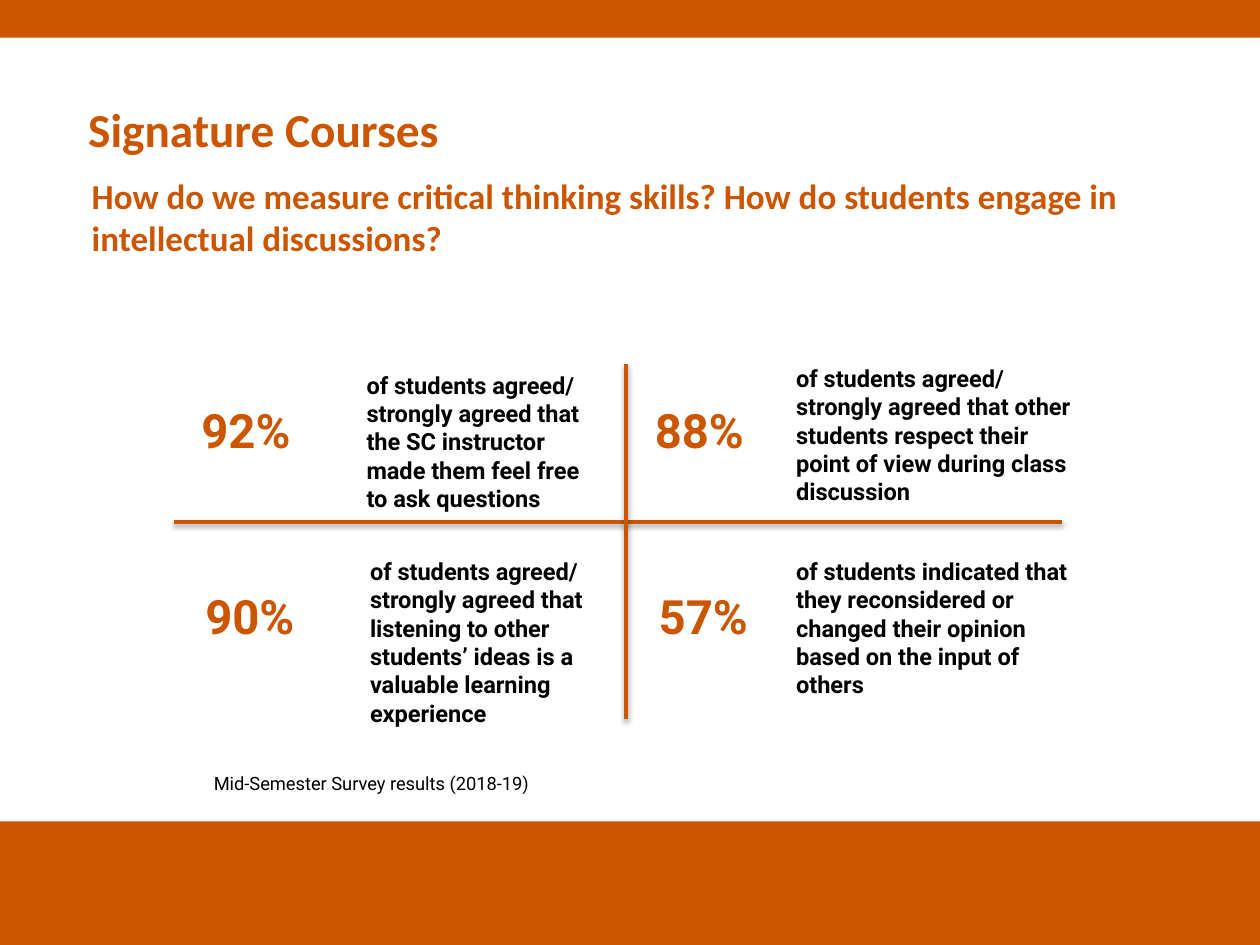
from dataclasses import dataclass

from lxml import etree
from pptx import Presentation
from pptx.dml.color import RGBColor as Rgb
from pptx.enum.shapes import MSO_CONNECTOR as Connector, MSO_SHAPE as Shape
from pptx.enum.text import MSO_ANCHOR as Anchor
from pptx.oxml.ns import qn
from pptx.util import Cm, Pt


@dataclass(frozen=True)
class Theme:
    accent: Rgb = Rgb(0xCC, 0x55, 0x00)
    ink: Rgb = Rgb(0, 0, 0)
    heading_font: str = "Calibri"
    body_font: str = "Roboto"
    large: float = 27
    medium: float = 20
    body: float = 13.5
    small: float = 10.5
    rule: float = 2


def write(frame, text, *, font, size, color, bold=True, after=None):
    for index, content in enumerate(text.split("\n")):
        paragraph = frame.add_paragraph() if index else frame.paragraphs[0]
        paragraph.text = content
        if after is not None:
            paragraph.space_after = Pt(after)
        for run in paragraph.runs:
            run.font.name = font
            run.font.size = Pt(size)
            run.font.bold = bold
            run.font.color.rgb = color


class SlideBuilder:
    def __init__(self, slide, theme):
        self.shapes = slide.shapes
        self.theme = theme

    def band(self, top, height):
        band = self.shapes.add_shape(Shape.RECTANGLE, 0, Cm(top), Cm(25.4), Cm(height))
        band.shadow.inherit = False
        band.fill.solid()
        band.fill.fore_color.rgb = self.theme.accent
        band.line.fill.background()

    def text(self, content, left, top, width, height, *, wrap=True,
             anchor=Anchor.TOP, insets=(0.25, 0.13), **style):
        frame = self.shapes.add_textbox(Cm(left), Cm(top), Cm(width), Cm(height)).text_frame
        frame.word_wrap = wrap
        frame.vertical_anchor = anchor
        frame.margin_left = frame.margin_right = Cm(insets[0])
        frame.margin_top = frame.margin_bottom = Cm(insets[1])
        write(frame, content, **style)

    def rule(self, *ends):
        rule = self.shapes.add_connector(Connector.STRAIGHT, *map(Cm, ends))
        rule.line.color.rgb = self.theme.accent
        rule.line.width = Pt(self.theme.rule)
        effects = etree.SubElement(rule._element.spPr, qn("a:effectLst"))
        shadow = etree.SubElement(effects, qn("a:outerShdw"), blurRad=str(Pt(3.1)),
                                  dist=str(Pt(1.6)), dir="5400000", rotWithShape="0")
        shade = etree.SubElement(shadow, qn("a:srgbClr"), val=str(self.theme.ink))
        etree.SubElement(shade, qn("a:alpha"), val="38000")

    def finding(self, percent, percent_at, statement, statement_at, statement_height):
        theme = self.theme
        self.text(percent, *percent_at, 3.33, 1.42,
                  font=theme.body_font, size=theme.large, color=theme.accent)
        self.text(statement, *statement_at, 6.07, statement_height,
                  font=theme.body_font, size=theme.body, color=theme.ink)


FINDINGS = [
    ("92%", (3.81, 7.95),
     "of students agreed/\vstrongly agreed that\vthe SC instructor\v"
     "made them feel free\vto ask questions", (7.14, 7.34), 4.29),
    ("90%", (3.89, 11.71),
     "of students agreed/\nstrongly agreed that listening to other students’ ideas "
     "is a valuable learning experience", (7.21, 11.1), 5.46),
    ("88%", (12.95, 7.95),
     "of students agreed/\nstrongly agreed that other students respect their "
     "point of view during class discussion", (15.8, 7.21), 4.88),
    ("57%", (13.03, 11.71),
     "of students indicated that they reconsidered or changed their opinion "
     "based on the input of others", (15.8, 11.1), 4.29),
]


def main():
    deck = Presentation()
    deck.slide_width, deck.slide_height = Cm(25.4), Cm(19.05)
    theme = Theme()
    page = SlideBuilder(deck.slides.add_slide(deck.slide_layouts[6]), theme)

    page.band(16.56, 2.49)
    page.band(0, 0.76)
    page.text("Signature Courses", 1.6, 2.03, 17.15, 1.14,
              anchor=Anchor.MIDDLE, insets=(0.18, 0.1),
              font=theme.heading_font, size=theme.large, color=theme.accent)
    page.text("How do we measure critical thinking skills? "
              "How do students engage in intellectual discussions?",
              1.6, 3.38, 22.15, 1.42, after=9,
              font=theme.heading_font, size=theme.medium, color=theme.accent)
    for finding in FINDINGS:
        page.finding(*finding)
    page.rule(3.51, 10.52, 21.41, 10.52)
    page.rule(12.62, 7.34, 12.62, 14.5)
    page.text("Mid-Semester Survey results (2018-19)", 4.06, 15.44, 7.06, 0.71,
              wrap=False, after=9, bold=False,
              font=theme.body_font, size=theme.small, color=theme.ink)
    deck.save("out.pptx")


if __name__ == "__main__":
    main()
